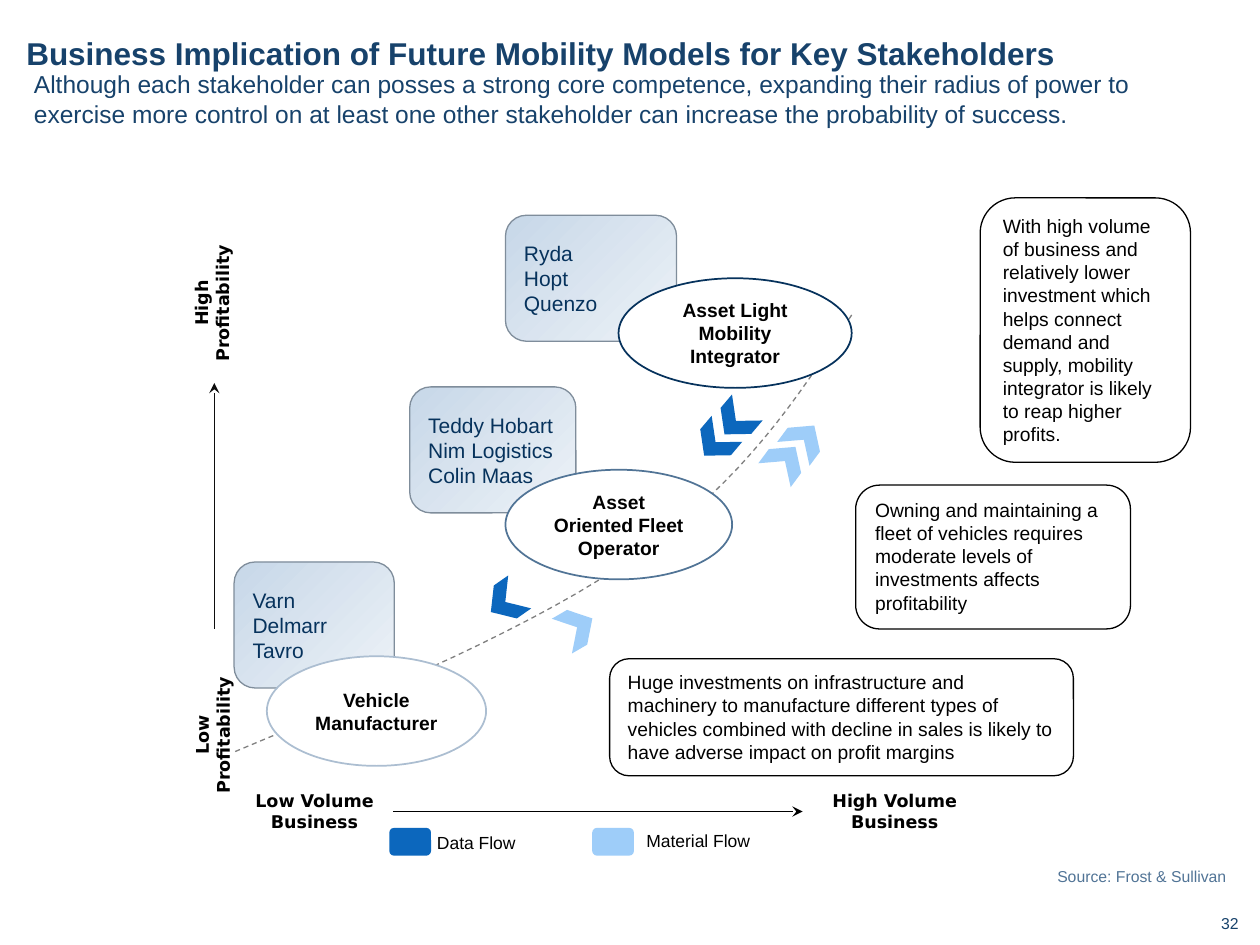
from dataclasses import dataclass
from typing import Optional

from lxml import etree
from pptx import Presentation
from pptx.dml.color import RGBColor
from pptx.enum.dml import MSO_LINE
from pptx.enum.shapes import MSO_CONNECTOR, MSO_SHAPE
from pptx.enum.text import MSO_ANCHOR, MSO_AUTO_SIZE, PP_ALIGN
from pptx.oxml.ns import qn
from pptx.util import Cm, Pt

ROUNDED, ELLIPSE, CHEVRON = MSO_SHAPE.ROUNDED_RECTANGLE, MSO_SHAPE.OVAL, MSO_SHAPE.CHEVRON
STRAIGHT = MSO_CONNECTOR.STRAIGHT
DASH = MSO_LINE.DASH
TOP, MIDDLE = MSO_ANCHOR.TOP, MSO_ANCHOR.MIDDLE
LEFT, CENTER, RIGHT = PP_ALIGN.LEFT, PP_ALIGN.CENTER, PP_ALIGN.RIGHT
NO_AUTOFIT = MSO_AUTO_SIZE.NONE

COLORS = {
    "title": "17426B", "navy": "06325C", "steel": "517496", "mist": "ACBED1",
    "black": "000000", "axis": "0D0D0D", "white": "FFFFFF", "curve": "808080",
    "partner_dark": "C7D7E8", "partner_light": "EDF2F7", "partner_line": "7F8D9B",
    "data": "0C67BD", "material": "9ECDF9",
}


@dataclass
class Box:
    left: float
    top: float
    width: float
    height: float
    text: str = ""
    color: str = "black"
    rotation: float = 0

    def lengths(self):
        return Cm(self.left), Cm(self.top), Cm(self.width), Cm(self.height)


@dataclass
class Style:
    size: float
    color: str = "black"
    bold: bool = False
    align: PP_ALIGN = LEFT
    anchor: MSO_ANCHOR = TOP
    font: str = "Arial"
    margin: Optional[float] = None


TITLE = Style(18, "title", bold=True, anchor=MIDDLE, margin=0.1)
SUBTITLE = Style(14, "title")
PARTNER = Style(12, "navy", anchor=MIDDLE)
STAKEHOLDER = Style(11, bold=True, align=CENTER, anchor=MIDDLE)
NOTE = Style(11)
AXIS = Style(10, bold=True, align=CENTER, font="DejaVu Sans")
LEGEND = Style(10)
SOURCE = Style(9, "steel", align=RIGHT)
NUMBER = Style(9, "title", align=RIGHT, margin=0)

PARTNERS = [
    Box(4.72, 11.33, 3.23, 2.54, "Varn\nDelmarr\nTavro"),
    Box(8.26, 7.8, 3.35, 2.54, "Teddy Hobart\nNim Logistics\nColin Maas"),
    Box(10.19, 4.34, 3.45, 2.54, "Ryda\nHopt\nQuenzo"),
]
STAKEHOLDERS = [
    Box(12.47, 5.61, 4.7, 2.21, "Asset Light Mobility Integrator", "navy"),
    Box(10.19, 9.47, 4.57, 2.21, "Asset Oriented Fleet Operator", "steel"),
    Box(5.38, 13.23, 4.42, 2.21, "Vehicle Manufacturer", "mist"),
]
NOTES = [
    Box(19.76, 3.99, 4.24, 5.33, "With high volume of business and relatively lower investment which "
        "helps connect demand and supply, mobility integrator is likely to reap higher profits."),
    Box(17.25, 9.78, 5.54, 2.9, "Owning and maintaining a fleet of vehicles requires moderate levels "
        "of investments affects profitability"),
    Box(12.29, 13.28, 9.35, 2.36, "Huge investments on infrastructure and machinery to manufacture "
        "different types of vehicles combined with decline in sales is likely to have adverse "
        "impact on profit margins"),
]
PROFIT_LABELS = [
    Box(2.44, 14.25, 3.73, 1.14, "Low Profitability", rotation=270),
    Box(2.46, 5.54, 3.66, 1.14, "High Profitability", rotation=270),
]
LOW_VOLUME = Box(4.75, 15.8, 3.18, 1.12, "Low Volume Business")
HIGH_VOLUME = Box(16.18, 15.8, 3.71, 1.12, "High Volume Business")
CURVE = [
    [(17.17, 6.35), (16.08, 8.03), (14.99, 9.68), (12.9, 11.15)],
    [(12.9, 11.15), (10.82, 12.62), (7.77, 13.89), (4.72, 15.16)],
]
CURVE_STEPS = 16
CHEVRON_SIZE = (0.71, 0.81)
CHEVRON_GROUPS = [
    ("data", 130.3, [(14.07, 8.51), (14.48, 8.08)]),
    ("material", 306.4, [(15.85, 8.46), (15.47, 8.89)]),
]
SINGLE_CHEVRONS = [("material", 329.9, (11.28, 12.24)), ("data", 145.1, (9.83, 11.73))]
LEGEND_ITEMS = [
    (Box(7.85, 16.69, 0.84, 0.56, color="data"), Box(8.56, 16.64, 4.22, 0.69, "Data Flow")),
    (Box(11.94, 16.69, 0.84, 0.56, color="material"), Box(12.78, 16.61, 4.22, 0.69, "Material Flow")),
]


def rgb(name: str) -> RGBColor:
    return RGBColor.from_string(COLORS[name])


def write(shape, text: str, style: Style) -> None:
    frame = shape.text_frame
    frame.text = text
    frame.word_wrap = True
    frame.auto_size = NO_AUTOFIT
    frame.vertical_anchor = style.anchor
    if style.margin is not None:
        frame.margin_left = frame.margin_right = Cm(style.margin)
        frame.margin_top = frame.margin_bottom = Cm(style.margin)
    for paragraph in frame.paragraphs:
        paragraph.alignment = style.align
        for run in paragraph.runs:
            run.font.name = style.font
            run.font.size = Pt(style.size)
            run.font.bold = style.bold
            run.font.color.rgb = rgb(style.color)


def add_label(slide, box: Box, style: Style):
    shape = slide.shapes.add_textbox(*box.lengths())
    shape.rotation = box.rotation
    write(shape, box.text, style)
    return shape


def add_figure(shapes, kind, box: Box, fill: str, line: str = "", width: float = 0.75):
    shape = shapes.add_shape(kind, *box.lengths())
    shape.rotation = box.rotation
    shape.shadow.inherit = False
    shape.fill.solid()
    shape.fill.fore_color.rgb = rgb(fill)
    if line:
        shape.line.color.rgb = rgb(line)
        shape.line.width = Pt(width)
    else:
        shape.line.fill.background()
    return shape


def add_partner(slide, box: Box) -> None:
    shape = add_figure(slide.shapes, ROUNDED, box, "partner_light", "partner_line")
    shape.fill.gradient()
    shape.fill.gradient_angle = 315
    for stop, color in zip(shape.fill.gradient_stops, ("partner_dark", "partner_light")):
        stop.color.rgb = rgb(color)
    write(shape, box.text, PARTNER)


def add_note(slide, box: Box) -> None:
    shape = add_figure(slide.shapes, ROUNDED, box, "white", "black")
    fill_color = shape._element.spPr.find(qn("a:solidFill")).find(qn("a:srgbClr"))
    etree.SubElement(fill_color, qn("a:alpha"), val="42000")
    write(shape, box.text, NOTE)


def add_chevron(shapes, color: str, rotation: float, position) -> None:
    add_figure(shapes, CHEVRON, Box(*position, *CHEVRON_SIZE, rotation=rotation), color)


def add_arrow(slide, start, end, color: str):
    connector = slide.shapes.add_connector(STRAIGHT, *map(Cm, start + end))
    connector.line.color.rgb = rgb(color)
    connector.line.width = Pt(0.75)
    etree.SubElement(connector.line._get_or_add_ln(), qn("a:tailEnd"), type="stealth")
    etree.SubElement(connector._element.spPr, qn("a:effectLst"))
    return connector


def bezier_point(controls, t: float):
    weights = ((1 - t) ** 3, 3 * t * (1 - t) ** 2, 3 * t ** 2 * (1 - t), t ** 3)
    return tuple(Cm(sum(w * c for w, c in zip(weights, axis))) for axis in zip(*controls))


def add_curve(slide) -> None:
    points = [bezier_point(segment, step / CURVE_STEPS)
              for segment in CURVE for step in range(1, CURVE_STEPS + 1)]
    builder = slide.shapes.build_freeform(*map(Cm, CURVE[0][0]), scale=1.0)
    builder.add_line_segments(points, close=False)
    shape = builder.convert_to_shape()
    shape.shadow.inherit = False
    shape.fill.background()
    shape.line.color.rgb = rgb("curve")
    shape.line.width = Pt(0.75)
    shape.line.dash_style = DASH


def add_headings(slide) -> None:
    title, subtitle = slide.shapes.title, slide.placeholders[1]
    title.left, title.top, title.width, title.height = Box(0.43, 0.64, 24.13, 0.84).lengths()
    write(title, "Business Implication of Future Mobility Models for Key Stakeholders", TITLE)
    subtitle.left, subtitle.top, subtitle.width, subtitle.height = Box(0.43, 1.27, 24.13, 1.27).lengths()
    write(subtitle, "Although each stakeholder can posses a strong core competence, expanding their "
          "radius of power to exercise more control on at least one other stakeholder can increase "
          "the probability of success.", SUBTITLE)
    paragraph = subtitle.text_frame.paragraphs[0]
    paragraph.space_before = Pt(0)
    properties = paragraph._p.get_or_add_pPr()
    properties.set("marL", "0")
    properties.set("indent", "0")
    etree.SubElement(properties, qn("a:buNone"))


def main() -> None:
    presentation = Presentation()
    presentation.slide_width, presentation.slide_height = Cm(25.4), Cm(19.05)
    slide = presentation.slides.add_slide(presentation.slide_layouts[1])
    add_headings(slide)
    for box in PARTNERS:
        add_partner(slide, box)
    add_curve(slide)
    for box in PROFIT_LABELS:
        add_label(slide, box, AXIS)
    add_arrow(slide, (4.32, 12.67), (4.32, 7.72), "axis")
    low_volume = add_label(slide, LOW_VOLUME, AXIS)
    high_volume = add_label(slide, HIGH_VOLUME, AXIS)
    volume_arrow = add_arrow(slide, (7.93, 16.36), (16.18, 16.36), "black")
    volume_arrow.begin_connect(low_volume, 3)
    volume_arrow.end_connect(high_volume, 1)
    for box in STAKEHOLDERS:
        write(add_figure(slide.shapes, ELLIPSE, box, "white", box.color, 1), box.text, STAKEHOLDER)
    for box in NOTES:
        add_note(slide, box)
    for color, rotation, positions in CHEVRON_GROUPS:
        group = slide.shapes.add_group_shape()
        for position in positions:
            add_chevron(group.shapes, color, rotation, position)
    for color, rotation, position in SINGLE_CHEVRONS:
        add_chevron(slide.shapes, color, rotation, position)
    for swatch, label in LEGEND_ITEMS:
        add_figure(slide.shapes, ROUNDED, swatch, swatch.color)
        add_label(slide, label, LEGEND)
    add_label(slide, Box(18.85, 17.35, 6.12, 0.64, "Source: Frost & Sullivan"), SOURCE)
    add_label(slide, Box(19.69, 18.42, 5.28, 0.43, "32"), NUMBER)
    presentation.save("out.pptx")


if __name__ == "__main__":
    main()
